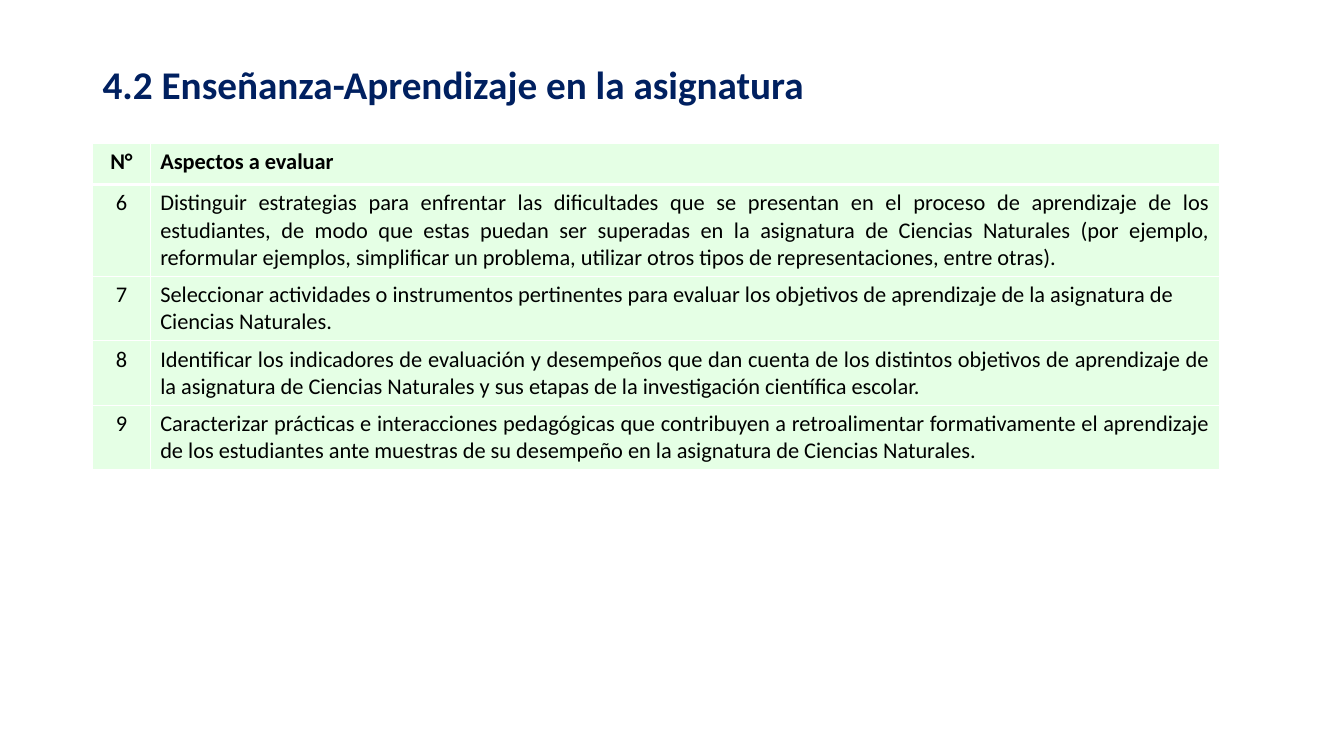
from lxml.etree import SubElement as Sub
from pptx import Presentation
from pptx.dml.color import RGBColor as Rgb
from pptx.enum.text import MSO_ANCHOR as Anchor, PP_ALIGN as Align
from pptx.oxml.ns import qn
from pptx.util import Inches, Pt

TITLE = "4.2 Enseñanza-Aprendizaje en la asignatura"
ROWS = [
    ("N°", "Aspectos a evaluar", Align.LEFT, 0.41),
    ("6", "Distinguir estrategias para enfrentar las dificultades que se presentan en el proceso "
     "de aprendizaje de los estudiantes, de modo que estas puedan ser superadas en la asignatura "
     "de Ciencias Naturales (por ejemplo, reformular ejemplos, simplificar un problema, utilizar "
     "otros tipos de representaciones, entre otras). ", Align.JUSTIFY, 0.91),
    ("7", "Seleccionar actividades o instrumentos pertinentes para evaluar los objetivos de "
     "aprendizaje de la asignatura de Ciencias Naturales.", Align.LEFT, 0.64),
    ("8", "Identificar los indicadores de evaluación y desempeños que dan cuenta de los distintos "
     "objetivos de aprendizaje de la asignatura de Ciencias Naturales y sus etapas de la "
     "investigación científica escolar.", Align.JUSTIFY, 0.64),
    ("9", "Caracterizar prácticas e interacciones pedagógicas que contribuyen a retroalimentar "
     "formativamente el aprendizaje de los estudiantes ante muestras de su desempeño en la "
     "asignatura de Ciencias Naturales.", Align.JUSTIFY, 0.64),
]
COLS = [0.57, 10.61]
LEFT, TOP = 0.92, 1.42
HUES = {"title": "002060", "text": "000000", "cell": "E5FFE5", "rule": "FFFFFF"}


def write(par, text, size, hue, bold):
    run = par.add_run()
    run.text = text
    font = run.font
    font.name, font.size, font.bold = "Calibri", Pt(size), bold
    font.color.rgb = Rgb.from_string(HUES[hue])


def rule(cell, side, width):
    line = Sub(cell._tc.get_or_add_tcPr(), qn("a:ln" + side), w=str(Pt(width)))
    fill = Sub(line, qn("a:solidFill"))
    Sub(fill, qn("a:srgbClr"), val=HUES["rule"])


def add_title(slide):
    box = slide.shapes.add_textbox(Inches(LEFT), Inches(0.56), Inches(11.5), Inches(0.6))
    frame = box.text_frame
    frame.word_wrap = True
    frame.vertical_anchor = Anchor.MIDDLE
    par = frame.paragraphs[0]
    par.line_spacing = 0.9
    write(par, TITLE, 28, "title", True)


def add_grid(slide):
    high = sum(row[3] for row in ROWS)
    grid = slide.shapes.add_table(len(ROWS), len(COLS), Inches(LEFT), Inches(TOP),
                                  Inches(sum(COLS)), Inches(high)).table
    for col, width in zip(grid.columns, COLS):
        col.width = Inches(width)
    for r, (num, text, align, height) in enumerate(ROWS):
        grid.rows[r].height = Inches(height)
        for c, (words, side) in enumerate([(num, Align.CENTER), (text, align)]):
            cell = grid.cell(r, c)
            for edge, width in zip("LRTB", (1, 1, 3 if r == 1 else 1, 3 if r == 0 else 1)):
                rule(cell, edge, width)
            cell.fill.solid()
            cell.fill.fore_color.rgb = Rgb.from_string(HUES["cell"])
            par = cell.text_frame.paragraphs[0]
            par.alignment = side
            write(par, words, 16, "text", r == 0)


def main():
    deck = Presentation()
    deck.slide_width, deck.slide_height = Inches(13.33), Inches(7.5)
    slide = deck.slides.add_slide(deck.slide_layouts[6])
    add_title(slide)
    add_grid(slide)
    deck.save("out.pptx")


if __name__ == "__main__":
    main()
